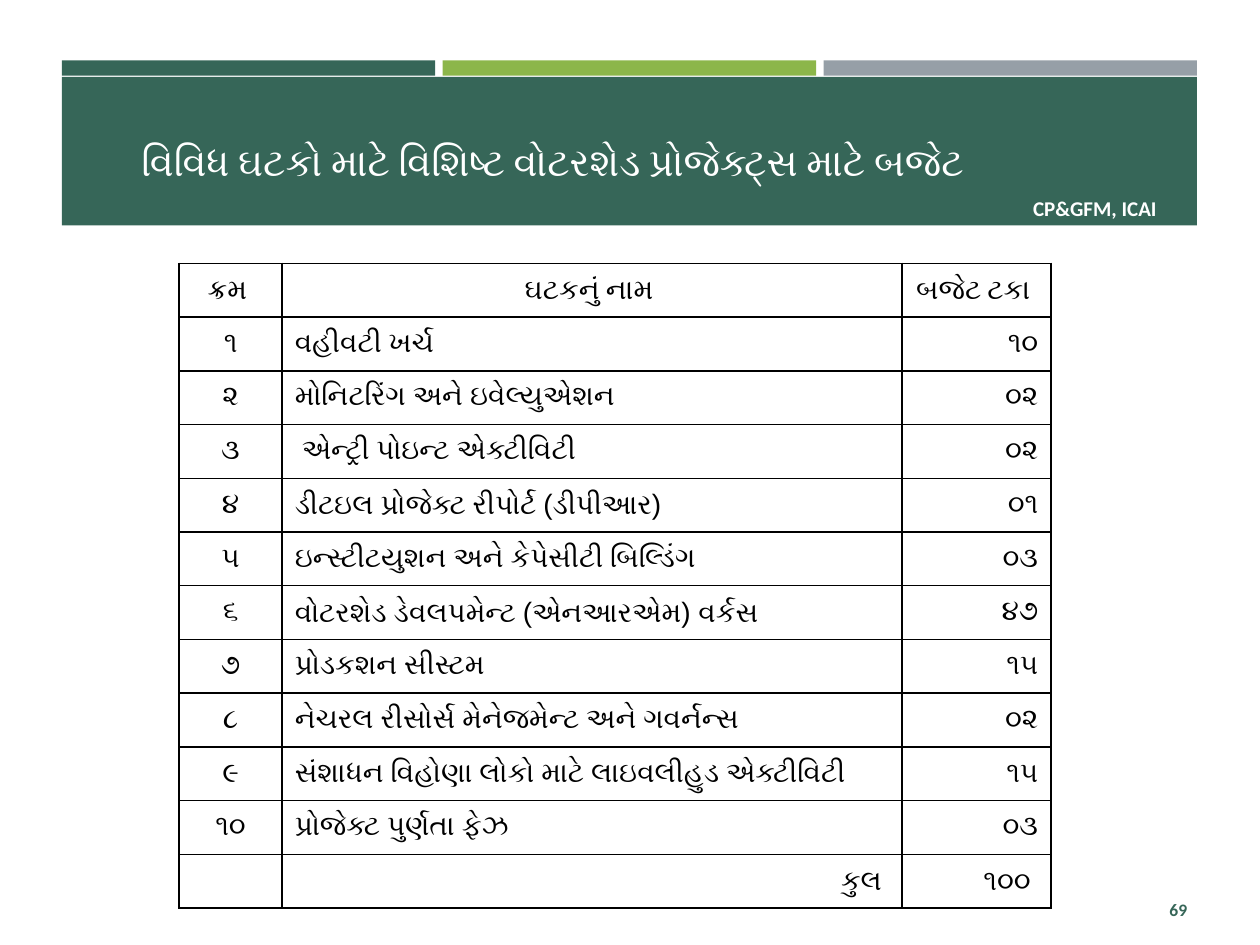
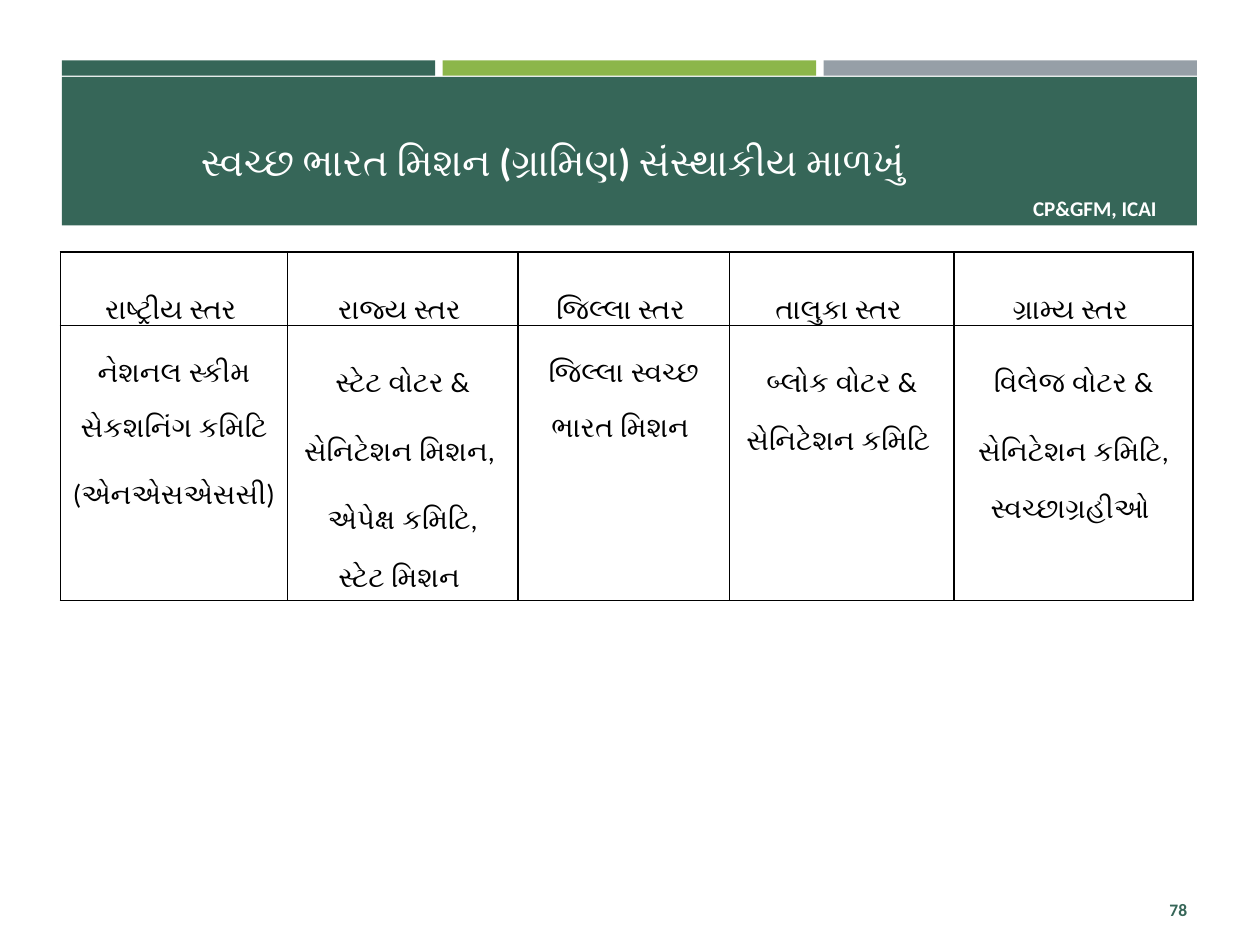
from pptx import Presentation
from pptx.util import Inches, Pt
from pptx.dml.color import RGBColor
from pptx.enum.shapes import MSO_SHAPE
from pptx.enum.text import PP_ALIGN, MSO_ANCHOR, MSO_AUTO_SIZE
from pptx.oxml import parse_xml
from pptx.oxml.ns import nsdecls

# Shared look
GREEN, LIME, GREY = "366658", "8CB64A", "969FA7"
WHITE, BLACK = "FFFFFF", "000000"
MAIN, ALT = "Calibri", "Arial"
LEFT, MID, RIGHT = PP_ALIGN.LEFT, PP_ALIGN.CENTER, PP_ALIGN.RIGHT
OWNER = "CP&GFM, ICAI"
EDGE, WIDE, GAP = 0.49, 9.01, 0.06

# Budget slide; text after "|" is set in the second font
BUDGET_TITLE = "વિવિધ ઘટકો માટે વિશિષ્ટ વોટરશેડ પ્રોજેક્ટ્સ માટે બજેટ"
BUDGET_HEAD = ("ક્રમ ", "ઘટકનું નામ ", "બજેટ ટકા ")
BUDGET = [
    ("૧", "વહીવટી ખર્ચ", "૧૦"),
    ("૨", "મોનિટરિંગ અને |ઇવેલ્યુએશન", "૦૨"),
    ("૩", " |એન્ટ્રી પોઇન્ટ એક્ટીવિટી", "૦૨"),
    ("૪", "|ડીટઇલ પ્રોજેક્ટ રીપોર્ટ (ડીપીઆર)", "૦૧"),
    ("૫", "ઇન્સ્ટીટયુશન અને કેપેસીટી બિલ્ડિંગ", "૦૩"),
    ("૬", "|વોટરશેડ ડેવલપમેન્ટ (એનઆરએમ) વર્કસ", "૪૭"),
    ("૭", "|પ્રોડકશન સીસ્ટમ", "૧૫"),
    ("૮", "|નેચરલ રીસોર્સ મેનેજમેન્ટ અને ગવર્નન્સ", "૦૨"),
    ("૯", "|સંશાધન વિહોણા લોકો માટે લાઇવલીહુડ એક્ટીવિટી", "૧૫"),
    ("૧૦", "પ્રોજેક્ટ પુર્ણતા ફે|ઝ", "૦૩"),
]
TOTAL = ("", "કુલ", "૧૦૦")

# Mission slide; each level holds a heading and its paragraphs
MISSION_TITLE = "સ્વચ્છ ભારત મિશન (ગ્રામિણ) સંસ્થાકીય માળખું"
LEVELS = [
    ("રાષ્ટ્રીય સ્તર ", "નેશનલ સ્કીમ સેકશનિંગ કમિટિ (એનએસએસસી)"),
    ("રાજ્ય સ્તર ", "સ્ટેટ વોટર & સેનિટેશન મિશન, \nએપેક્ષ કમિટિ,\nસ્ટેટ મિશન "),
    ("જિલ્લા સ્તર ", "જિલ્લા સ્વચ્છ ભારત મિશન "),
    ("તાલુકા સ્તર ", "બ્લોક વોટર & સેનિટેશન કમિટિ "),
    ("ગ્રામ્ય સ્તર ", "વિલેજ વોટર & સેનિટેશન કમિટિ,\nસ્વચ્છાગ્રહીઓ "),
]


def color(code):
    return RGBColor.from_string(code)


def write(frame, text, size=16, tint=BLACK, bold=False, align=LEFT, line=None):
    frame.word_wrap = True
    for i, part in enumerate(text.split("\n")):
        para = frame.add_paragraph() if i else frame.paragraphs[0]
        para.alignment = align
        if line:
            para.line_spacing = line
        for face, words in zip((MAIN, ALT), part.split("|")):
            if words:
                run = para.add_run()
                run.text = words
                font = run.font
                font.name, font.size, font.bold = face, Pt(size), bold
                font.color.rgb = color(tint)
                if bold:
                    # Gujarati needs a complex-script face to turn bold
                    run._r.get_or_add_rPr().append(parse_xml(
                        f'<a:cs {nsdecls("a")} typeface="{face}"/>'))


def block(slide, x, y, w, h, fill):
    shape = slide.shapes.add_shape(
        MSO_SHAPE.RECTANGLE, Inches(x), Inches(y), Inches(w), Inches(h))
    shape.shadow.inherit = False
    shape.fill.solid()
    shape.fill.fore_color.rgb = color(fill)
    shape.line.fill.background()
    return shape


def start(deck, title, number):
    slide = deck.slides.add_slide(deck.slide_layouts[5])
    # Three strips above the title band
    strip = (WIDE - 2 * GAP) / 3
    for i, fill in enumerate((GREEN, LIME, GREY)):
        block(slide, EDGE + i * (strip + GAP), 0.48, strip, 0.12, fill)
    block(slide, EDGE, 0.61, WIDE, 1.18, GREEN)
    # Owner label
    frame = block(slide, 7.99, 1.56, 1.4, 0.18, GREEN).text_frame
    frame.vertical_anchor = MSO_ANCHOR.MIDDLE
    write(frame, OWNER, size=12, tint=WHITE, bold=True, align=MID)
    # Title, brought in front of the band
    head = slide.shapes.title
    slide.shapes.element.append(head.element)
    head.left, head.top = Inches(EDGE), Inches(0.62)
    head.width, head.height = Inches(7.79), Inches(1.14)
    frame = head.text_frame
    frame.auto_size = MSO_AUTO_SIZE.NONE
    frame.vertical_anchor = MSO_ANCHOR.MIDDLE
    write(frame, title, size=22, tint=WHITE, bold=True, align=MID, line=1.5)
    # Page number
    box = slide.shapes.add_textbox(
        Inches(8.68), Inches(7.02), Inches(0.84), Inches(0.4))
    box.text_frame.vertical_anchor = MSO_ANCHOR.MIDDLE
    write(box.text_frame, str(number), size=10, tint=GREEN, bold=True, align=RIGHT)
    return slide


def border(cell):
    props = cell._tc.get_or_add_tcPr()
    for i, side in enumerate(("lnL", "lnR", "lnT", "lnB")):
        props.insert(i, parse_xml(
            f'<a:{side} {nsdecls("a")} w="12700"><a:solidFill>'
            f'<a:srgbClr val="{BLACK}"/></a:solidFill></a:{side}>'))


def grid(slide, x, y, cols, rows):
    table = slide.shapes.add_table(
        len(rows), len(cols), Inches(x), Inches(y),
        Inches(sum(cols)), Inches(sum(rows))).table
    table.first_row = table.horz_banding = False
    for col, size in zip(table.columns, cols):
        col.width = Inches(size)
    for row, size in zip(table.rows, rows):
        row.height = Inches(size)
    for cell in table.iter_cells():
        cell.fill.background()
        border(cell)
    return table


def budget(deck):
    slide = start(deck, BUDGET_TITLE, 69)
    rows = [BUDGET_HEAD, *BUDGET, TOTAL]
    last = len(rows) - 1
    table = grid(slide, 1.42, 2.09, (0.82, 4.92, 1.18), [5.12 / len(rows)] * len(rows))
    for r, row in enumerate(rows):
        for c, text in enumerate(row):
            cell = table.cell(r, c)
            cell.vertical_anchor = MSO_ANCHOR.MIDDLE
            align = (MID, LEFT, RIGHT)[c]
            if r == 0:
                align = MID
            elif r == last:
                align = RIGHT
                cell.margin_right = Inches(0.16)
            write(cell.text_frame, text, bold=r in (0, last), align=align)


def mission(deck):
    slide = start(deck, MISSION_TITLE, 78)
    table = grid(slide, 0.48, 2, (1.8, 1.83, 1.68, 1.78, 1.9), (0.48, 1.84))
    for c, level in enumerate(LEVELS):
        for r, text in enumerate(level):
            cell = table.cell(r, c)
            cell.margin_left = cell.margin_right = Inches(0.07)
            cell.margin_bottom = 0
            write(cell.text_frame, text, bold=r == 0, align=MID, line=2.0)


def main():
    deck = Presentation()
    deck.slide_width, deck.slide_height = Inches(10), Inches(7.5)
    budget(deck)
    mission(deck)
    deck.save("out.pptx")


if __name__ == "__main__":
    main()
